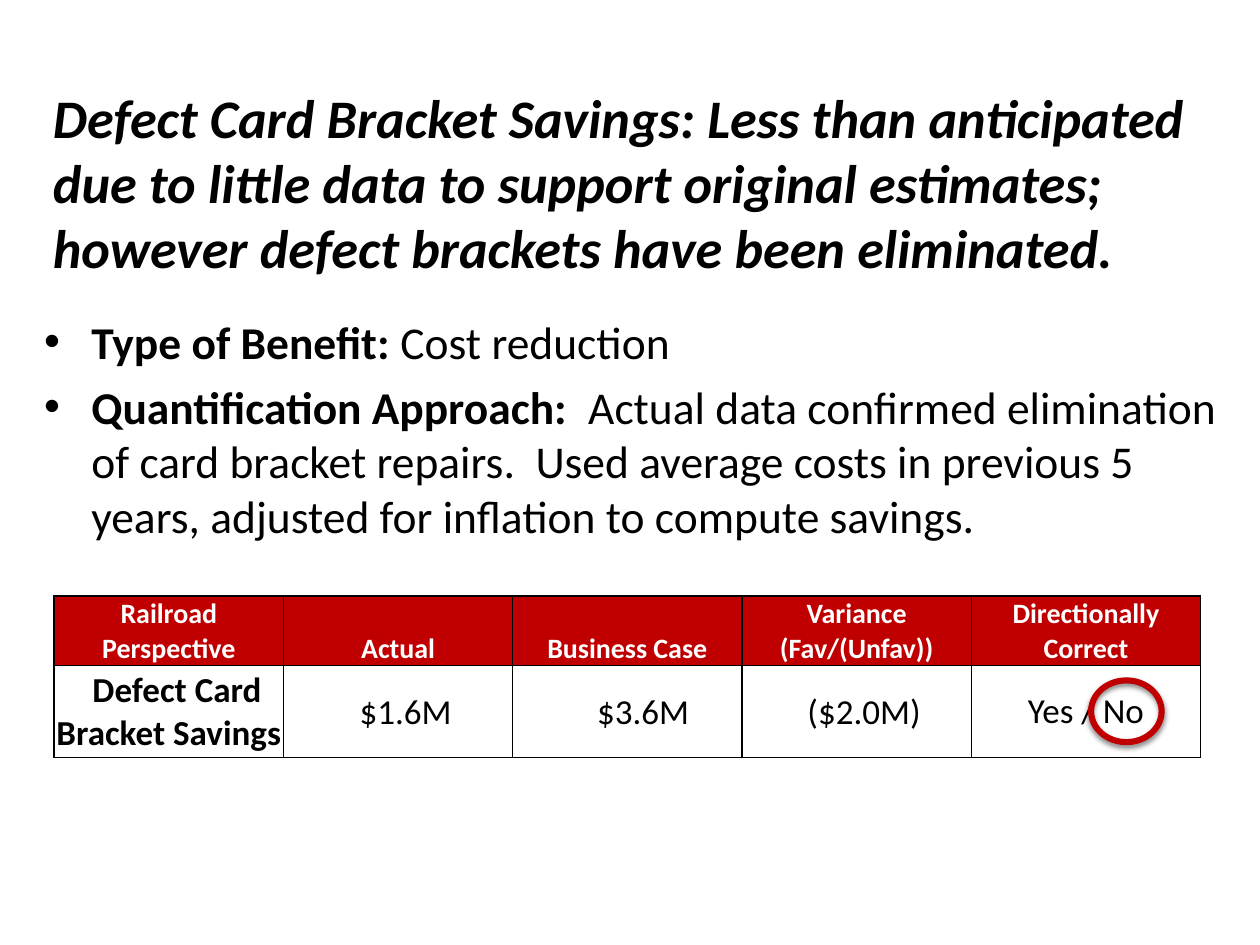
from lxml.etree import SubElement
from pptx import Presentation
from pptx.dml.color import RGBColor
from pptx.enum.shapes import MSO_SHAPE
from pptx.enum.text import MSO_ANCHOR, PP_ALIGN
from pptx.oxml import parse_xml
from pptx.oxml.ns import nsdecls, qn
from pptx.util import Emu, Inches, Pt

COLORS = {"text": "000000", "accent": "C00000", "paper": "FFFFFF"}
FONT = "Calibri"


def set_font(font, size, color, bold=None, italic=None):
    font.name, font.size, font.bold, font.italic = FONT, Pt(size), bold, italic
    font.color.rgb = RGBColor.from_string(COLORS[color])


def add_borders(cell):
    """Draw a 1 pt line on all four sides; call before the cell is filled."""
    properties = cell._tc.get_or_add_tcPr()
    for side in ("lnL", "lnR", "lnT", "lnB"):
        line = SubElement(properties, qn(f"a:{side}"), w=str(Pt(1)))
        fill = SubElement(line, qn("a:solidFill"))
        SubElement(fill, qn("a:srgbClr"), val=COLORS["text"])


deck = Presentation()
deck.slide_width, deck.slide_height = Inches(10), Inches(7.5)
page = deck.slides.add_slide(deck.slide_layouts[1])

# Title
title = page.shapes.title
title.left, title.top = Inches(0.32), Inches(0.58)
title.width, title.height = Inches(9.52), Inches(1.72)
title.text_frame.text = (
    "Defect Card Bracket Savings: Less than anticipated due to little data to "
    "support original estimates; however defect brackets have been eliminated."
)
heading = title.text_frame.paragraphs[0]
heading.alignment = PP_ALIGN.LEFT
set_font(heading.font, 31, "text", bold=True, italic=True)

# Benefit list: bold label, plain text, space after
benefits = [
    ("Type of Benefit:", " Cost reduction", 6),
    ("Quantification Approach:  ",
     "Actual data confirmed elimination of card bracket repairs.  Used average "
     "costs in previous 5 years, adjusted for inflation to compute savings.", 18),
]
body = page.placeholders[1]
body.left, body.top = Inches(0.25), Inches(2.44)
body.width, body.height = Inches(9.51), Inches(1.94)
frame = body.text_frame
for index, (label, detail, gap) in enumerate(benefits):
    para = frame.paragraphs[0] if index == 0 else frame.add_paragraph()
    para.space_before, para.space_after = Pt(0), Pt(gap)
    set_font(para.font, 26, "text")
    span = para.add_run()
    span.text, span.font.bold = label, True
    para.add_run().text = detail

# Savings table
rows = [
    ["Railroad Perspective", "Actual", "Business Case",
     "Variance (Fav/(Unfav))", "Directionally Correct"],
    ["Defect Card Bracket Savings", "$1.6M", "$3.6M", "($2.0M)", "Yes / No"],
]
row_heights = [0.54, 0.73]
value_insets = [0.01, 0.13, 0.26, 0.13, 0.1]
table = page.shapes.add_table(
    len(rows), len(rows[0]), Inches(0.43), Inches(4.73),
    Inches(9.1), Inches(sum(row_heights))).table
for row_index, texts in enumerate(rows):
    is_header = row_index == 0
    table.rows[row_index].height = Inches(row_heights[row_index])
    for column, text in enumerate(texts):
        cell = table.cell(row_index, column)
        add_borders(cell)
        cell.fill.solid()
        cell.fill.fore_color.rgb = RGBColor.from_string(
            COLORS["accent" if is_header else "paper"])
        cell.vertical_anchor = MSO_ANCHOR.BOTTOM if is_header else MSO_ANCHOR.MIDDLE
        cell.margin_left = Inches(0.01 if is_header else value_insets[column])
        cell.margin_right = cell.margin_top = Inches(0.01)
        cell.margin_bottom = Emu(0)
        cell.text = text
        para = cell.text_frame.paragraphs[0]
        para.alignment = PP_ALIGN.CENTER
        if is_header:
            set_font(para.font, 16, "paper", bold=True)
        else:
            set_font(para.font, 20, "text", bold=column == 0)

# The first line of the row label is set in slightly
label_properties = table.cell(1, 0).text_frame.paragraphs[0]._p.get_or_add_pPr()
label_properties.set("indent", str(Inches(0.13)))
last_cell = table.cell(1, 4)
last_cell.margin_right = Inches(0.1)
last_cell.margin_top = last_cell.margin_bottom = Inches(0.05)

# Ring around the answer
ring = page.shapes.add_shape(
    MSO_SHAPE.OVAL, Inches(8.66), Inches(5.4), Inches(0.56), Inches(0.49))
ring.fill.background()
ring.line.color.rgb = RGBColor.from_string(COLORS["accent"])
ring.line.width = Pt(3.5)
ring._element.spPr.append(parse_xml(
    f'<a:effectLst {nsdecls("a")}>'
    f'<a:outerShdw blurRad="{Pt(3.1)}" dist="{Pt(1.8)}" dir="5400000" rotWithShape="0">'
    f'<a:srgbClr val="{COLORS["text"]}"><a:alpha val="48000"/></a:srgbClr>'
    '</a:outerShdw></a:effectLst>'))

deck.save("out.pptx")
